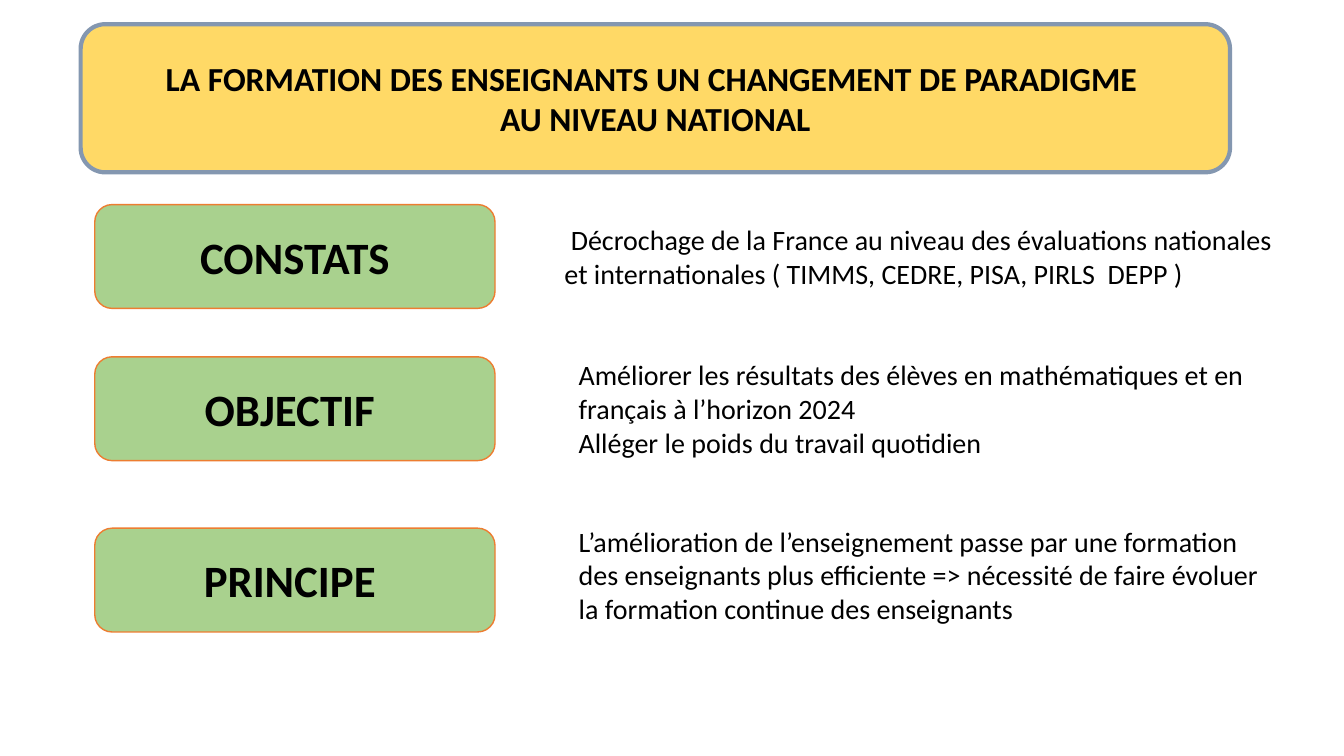
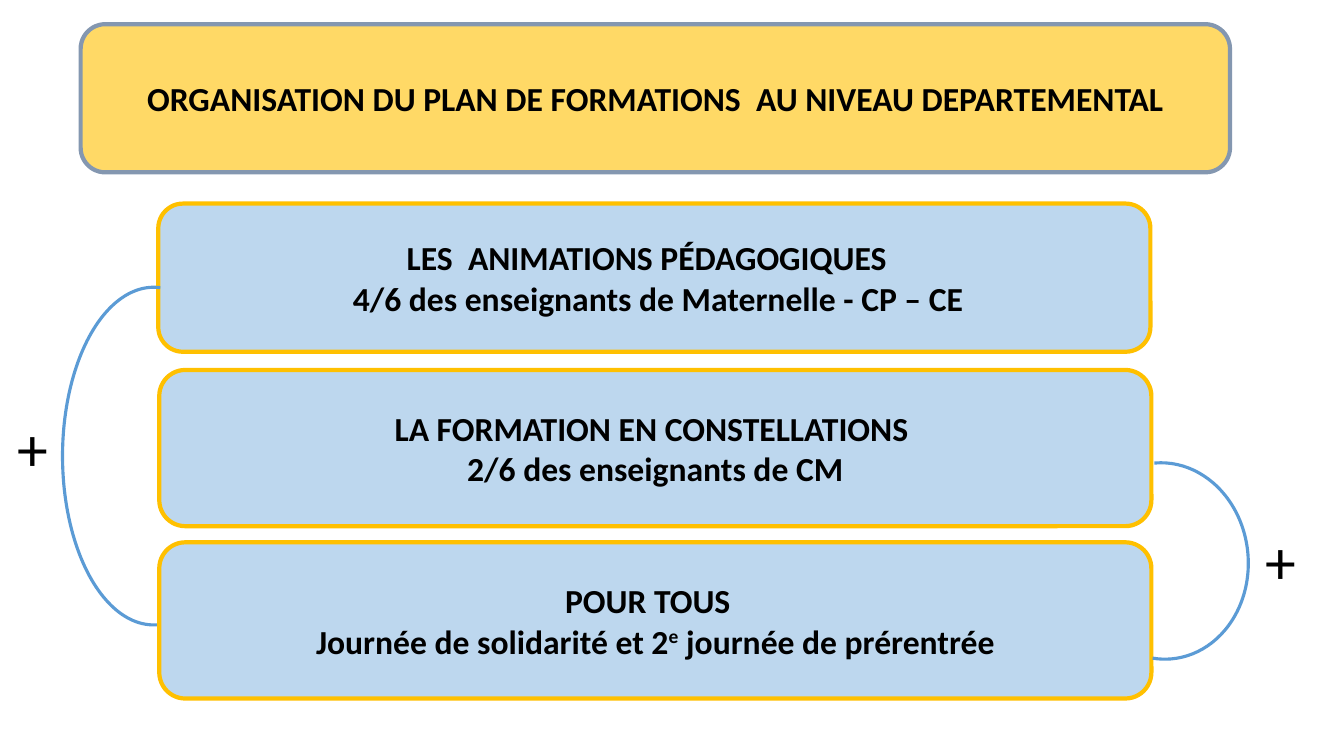
from pptx import Presentation
from pptx import util as u
from pptx.dml import color
from pptx.enum import shapes, text

FONT = "Calibri"
COLORS = {
    "text": "000000",
    "title_fill": "FFD966",
    "title_line": "8497B0",
    "label_fill": "A9D18E",
    "label_line": "ED7D31",
    "step_fill": "BDD7EE",
    "step_line": "FFC000",
    "arc": "5B9BD5",
}


def rgb(name):
    return color.RGBColor.from_string(COLORS[name])


def inches(*lengths):
    return [u.Inches(length) for length in lengths]


def write(frame, lines, size, bold=False, align=text.PP_ALIGN.LEFT):
    frame.word_wrap = True
    for index, line in enumerate(lines):
        para = frame.paragraphs[0] if index == 0 else frame.add_paragraph()
        para.alignment = align
        para.font.name = FONT
        para.font.size = u.Pt(size)
        para.font.bold = bold
        para.font.color.rgb = rgb("text")
        parts = [line] if isinstance(line, str) else line
        for position, part in enumerate(parts):
            span = para.add_run()
            span.text = part
            if position % 2:
                span._r.get_or_add_rPr().set("baseline", "30000")


def add_panel(page, place, style, lines, size=24, line_width=3):
    box = page.shapes.add_shape(shapes.MSO_SHAPE.ROUNDED_RECTANGLE, *inches(*place))
    box.shadow.inherit = False
    box.fill.solid()
    box.fill.fore_color.rgb = rgb(style + "_fill")
    box.line.color.rgb = rgb(style + "_line")
    box.line.width = u.Pt(line_width)
    box.text_frame.vertical_anchor = text.MSO_ANCHOR.MIDDLE
    write(box.text_frame, lines, size, True, text.PP_ALIGN.CENTER)


def add_text(page, place, lines, size=20):
    box = page.shapes.add_textbox(*inches(*place))
    write(box.text_frame, lines, size)
    box.text_frame.auto_size = text.MSO_AUTO_SIZE.SHAPE_TO_FIT_TEXT


def add_arc(page, place, start, end, rotation=0):
    arc = page.shapes.add_shape(shapes.MSO_SHAPE.ARC, *inches(*place))
    arc.shadow.inherit = False
    arc.adjustments[0] = start
    arc.adjustments[1] = end
    arc.rotation = rotation
    arc.fill.background()
    arc.line.color.rgb = rgb("arc")
    arc.line.width = u.Pt(2.25)


def add_page(deck, title_lines):
    page = deck.slides.add_slide(deck.slide_layouts[6])
    add_panel(page, (0.8, 0.24, 11.4, 1.47), "title", title_lines)
    return page


def build_national(deck):
    page = add_page(deck, [
        "LA FORMATION DES ENSEIGNANTS UN CHANGEMENT DE PARADIGME ",
        "AU NIVEAU NATIONAL",
    ])
    rows = [
        ("CONSTATS", 2.03, (5.5, 2.16, 7.45, 0.77), [
            " Décrochage de la France au niveau des évaluations nationales "
            "et internationales ( TIMMS, CEDRE, PISA, PIRLS  DEPP )",
        ]),
        ("OBJECTIF ", 3.54, (5.64, 3.5, 7.17, 1.11), [
            "Améliorer les résultats des élèves en mathématiques et en "
            "français à l’horizon 2024",
            "Alléger le poids du travail quotidien",
        ]),
        ("PRINCIPE ", 5.24, (5.64, 5.15, 6.95, 1.11), [
            "L’amélioration de l’enseignement passe par une formation "
            "des enseignants plus efficiente => nécessité de faire évoluer "
            "la formation continue des enseignants",
        ]),
    ]
    for label, top, place, lines in rows:
        add_panel(page, (0.94, top, 3.97, 1.03), "label", [label], 32, 1)
        add_text(page, place, lines)


def build_departmental(deck):
    page = add_page(deck, ["ORGANISATION DU PLAN DE FORMATIONS  AU NIVEAU DEPARTEMENTAL"])
    steps = [
        (1.57, 2.02, 1.47, [
            "LES  ANIMATIONS PÉDAGOGIQUES  ",
            " 4/6 des enseignants de Maternelle - CP – CE",
        ]),
        (1.58, 3.67, 1.55, [
            "LA FORMATION EN CONSTELLATIONS ",
            "2/6 des enseignants de CM",
        ]),
        (1.58, 5.38, 1.55, [
            "POUR TOUS  ",
            ["Journée de solidarité et 2", "e", " journée de prérentrée"],
        ]),
    ]
    for left, top, height, lines in steps:
        add_panel(page, (left, top, 9.84, height), "step", lines)
    add_arc(page, (10.69, 4.59, 1.69, 1.95), 53.74, 168.43, 175.4)
    add_arc(page, (0.62, 2.85, 1.81, 3.35), 53.37, 163.34)
    for place in [(0.08, 4.02, 0.54, 0.84), (12.45, 5.14, 0.47, 0.84)]:
        add_text(page, place, ["+"], 44)


def main():
    deck = Presentation()
    deck.slide_width, deck.slide_height = inches(13.33, 7.5)
    build_national(deck)
    build_departmental(deck)
    deck.save("out.pptx")


if __name__ == "__main__":
    main()
